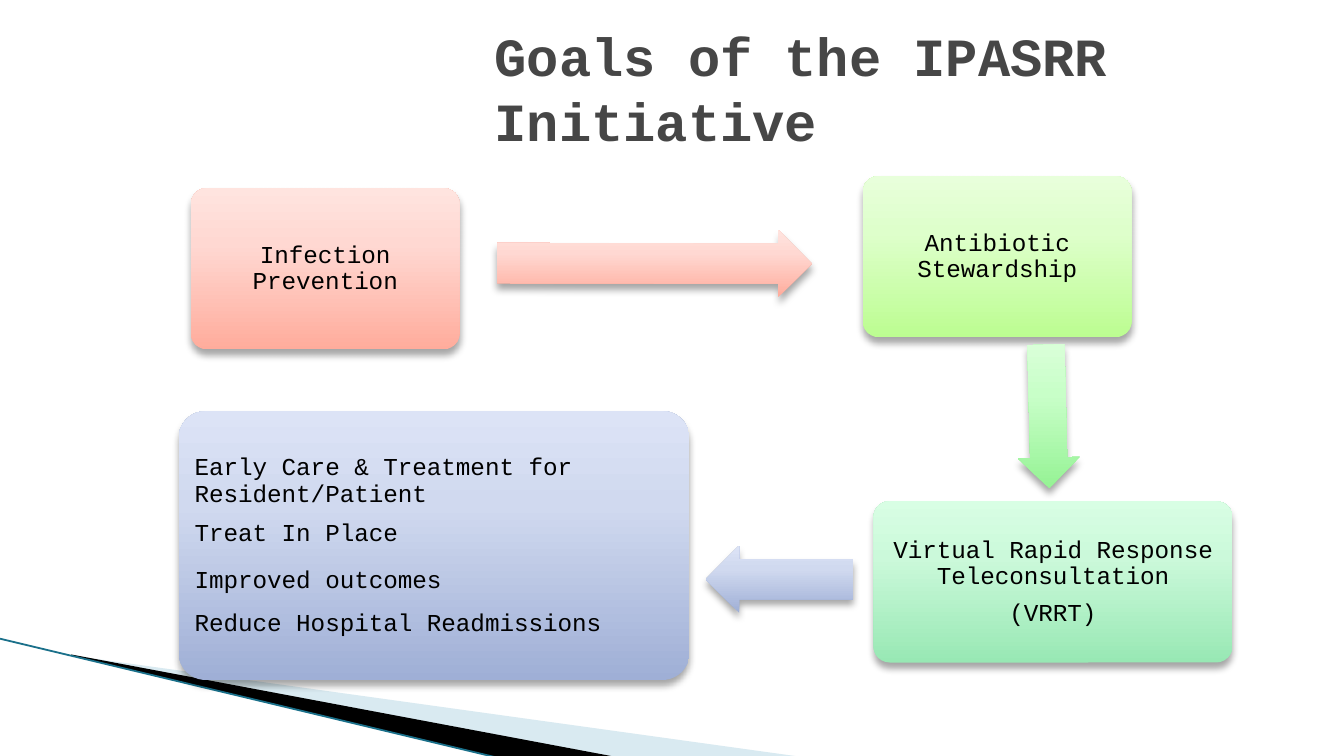
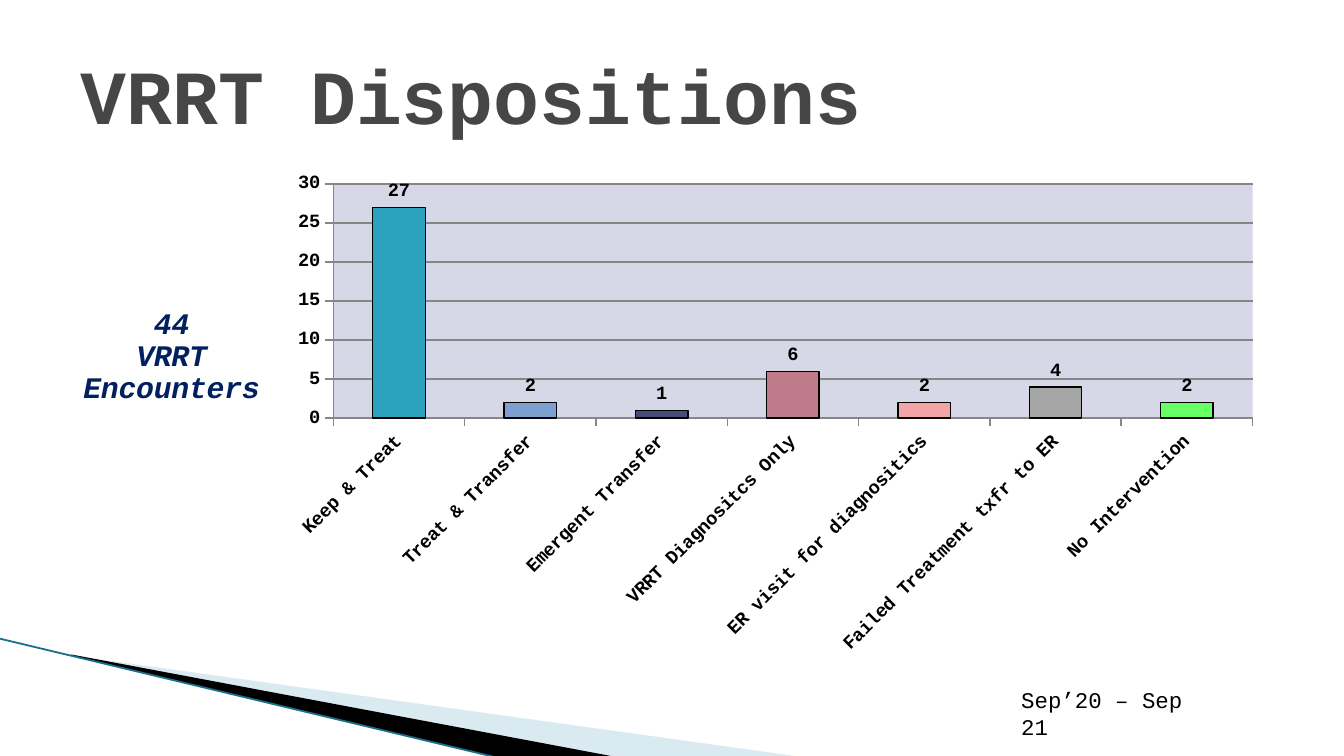
from pptx import Presentation
from pptx.chart.data import CategoryChartData
from pptx.dml.color import RGBColor
from pptx.enum.chart import XL_CHART_TYPE as ChartType, XL_LABEL_POSITION as LabelPosition, XL_TICK_MARK as Tick
from pptx.enum.shapes import MSO_CONNECTOR as Connector, MSO_SHAPE as Shape
from pptx.enum.text import MSO_ANCHOR as Anchor, MSO_AUTO_SIZE as AutoSize, PP_ALIGN as Align
from pptx.oxml import parse_xml
from pptx.oxml.ns import nsdecls
from pptx.util import Inches, Pt

BLACK = RGBColor(0x00, 0x00, 0x00)
TITLE_GREY = RGBColor(0x46, 0x46, 0x46)
PALE_TEAL = RGBColor(0xA0, 0xCB, 0xDC)
DEEP_TEAL = RGBColor(0x1A, 0x70, 0x8A)
NAVY = RGBColor(0x00, 0x20, 0x60)
GRID_GREY = RGBColor(0x86, 0x86, 0x86)
PLOT_LILAC = RGBColor(0xD7, 0xD8, 0xE7)
BAR_COLOURS = [
    RGBColor(0x2D, 0xA2, 0xBF), RGBColor(0x7D, 0xA0, 0xD0), RGBColor(0x47, 0x4B, 0x78),
    RGBColor(0xC0, 0x7B, 0x8A), RGBColor(0xF2, 0xA4, 0xA7), RGBColor(0xA6, 0xA6, 0xA6),
    RGBColor(0x66, 0xFF, 0x66),
]
CORAL = [RGBColor(0xFF, 0xAC, 0x9C), RGBColor(0xFF, 0xD8, 0xD2), RGBColor(0xFF, 0xE4, 0xDF)]
LIME = [RGBColor(0xBC, 0xFD, 0x91), RGBColor(0xDE, 0xFF, 0xCB), RGBColor(0xE8, 0xFF, 0xDB)]
GREEN = [RGBColor(0x95, 0xF2, 0x94), RGBColor(0xC8, 0xFF, 0xC8), RGBColor(0xD9, 0xFF, 0xD8)]
MINT = [RGBColor(0x98, 0xE8, 0xB4), RGBColor(0xCB, 0xF9, 0xDA), RGBColor(0xD8, 0xFE, 0xE4)]
BLUE = [RGBColor(0x9F, 0xAF, 0xD6), RGBColor(0xD0, 0xD9, 0xEF), RGBColor(0xDC, 0xE3, 0xF6)]
FONT = "Courier New"

deck = Presentation()
deck.slide_width, deck.slide_height = Inches(10), Inches(5.625)
CELL = deck.slide_width / 100


def write(frame, lines, size, colour=BLACK, **font_values):
    frame.text = "\n".join(lines)
    for para in frame.paragraphs:
        for name, value in {"name": FONT, "size": Pt(size), **font_values}.items():
            setattr(para.font, name, value)
        para.font.color.rgb = colour


def add_glossy(page, kind, cells, colours, adjustments):
    shape = page.shapes.add_shape(kind, *[round(CELL * cell) for cell in cells])
    for index, value in enumerate(adjustments):
        shape.adjustments[index] = value
    shape.line.fill.background()
    stops = "".join(
        f'<a:gs pos="{stop}"><a:srgbClr val="{colour}"/></a:gs>'
        for stop, colour in zip((0, 65000, 100000), colours))
    outline = shape.element.spPr.find("{*}ln")
    outline.addprevious(parse_xml(
        f'<a:gradFill {nsdecls("a")} rotWithShape="0"><a:gsLst>{stops}</a:gsLst>'
        '<a:lin ang="16200000" scaled="0"/></a:gradFill>'))
    outline.addnext(parse_xml(
        f'<a:effectLst {nsdecls("a")}><a:outerShdw blurRad="50800" dist="38100" dir="5400000" '
        'rotWithShape="0"><a:srgbClr val="000000"><a:alpha val="35000"/></a:srgbClr>'
        '</a:outerShdw></a:effectLst>'))
    return shape


layout = deck.slide_layouts[5]
goals_page, chart_page = [deck.slides.add_slide(layout) for _ in range(2)]

wedges = [
    (PALE_TEAL, [(55, 488), (595, 563), (456, 563)]),
    (BLACK, [(53, 487), (457, 563), (372, 564), (54, 488)]),
]
band = []
for colour, points in wedges:
    builder = goals_page.shapes.build_freeform(*points[0], scale=CELL / 10)
    builder.add_line_segments(points[1:], close=True)
    wedge = builder.convert_to_shape()
    wedge.shadow.inherit = False
    wedge.fill.solid()
    wedge.fill.fore_color.rgb = colour
    wedge.line.fill.background()
    band.append(wedge)
band[0].element.spPr.find("{*}solidFill")[0].append(
    parse_xml(f'<a:alpha {nsdecls("a")} val="40000"/>'))
edge = goals_page.shapes.add_connector(
    Connector.STRAIGHT, *[round(CELL * cell) for cell in (-0.1, 47.5, 37.1, 56.4)])
edge.line.color.rgb = DEEP_TEAL
edge.line.width = Pt(0.95)
edge.element.spPr.append(parse_xml(f'<a:effectLst {nsdecls("a")}/>'))
band.append(edge)
for index, part in enumerate(band):
    layout.shapes.element.insert(2 + index, part.element)

titles = [
    (goals_page, "Goals of the IPASRR Initiative", 28.8, (35.8, 2.3, 62.5, 8.4)),
    (chart_page, "VRRT Dispositions", 41, (5, 2.3, 90, 9.4)),
]
for page, text, size, cells in titles:
    title = page.shapes.title
    title.left, title.top, title.width, title.height = [round(CELL * cell) for cell in cells]
    frame = title.text_frame
    write(frame, [text], size, TITLE_GREY, bold=True)
    frame.auto_size = AutoSize.NONE
    frame.vertical_anchor = Anchor.MIDDLE
    frame.paragraphs[0].alignment = Align.LEFT

goals = [
    ((14.2, 14, 20, 12), CORAL, Align.CENTER, ["Infection Prevention"]),
    ((64.2, 13.1, 20, 12), LIME, Align.CENTER, ["Antibiotic Stewardship"]),
    ((65, 37.3, 26.7, 12), MINT, Align.CENTER,
     ["Virtual Rapid Response Teleconsultation", "(VRRT)"]),
    ((13.3, 30.6, 38, 20), BLUE, Align.LEFT,
     ["Early Care & Treatment for Resident/Patient", "Treat In Place",
      "Improved outcomes", "Reduce Hospital Readmissions"]),
]
for cells, colours, alignment, lines in goals:
    box = add_glossy(goals_page, Shape.ROUNDED_RECTANGLE, cells, colours, [0.1])
    frame = box.text_frame
    write(frame, lines, 13)
    frame.word_wrap = True
    frame.vertical_anchor = Anchor.MIDDLE
    for side in ("left", "top", "right", "bottom"):
        setattr(frame, f"margin_{side}", Inches(0.06))
    for index, para in enumerate(frame.paragraphs):
        inner = 0 < index < len(lines) - 1
        para.alignment = alignment
        para.line_spacing = 1.0 if inner else 0.9
        para.space_after = Pt(9.2 if inner else 5.5)

arrows = [
    ((37, 17.1, 23.4, 5), CORAL, 0.1),
    ((72.6, 28.7, 10.7, 4.6), GREEN, 88.6),
    ((52.5, 40.6, 11, 5), BLUE, 180),
]
for cells, colours, turn in arrows:
    add_glossy(goals_page, Shape.RIGHT_ARROW, cells, colours, [0.6, 0.5]).rotation = turn

data = CategoryChartData()
data.categories = [
    "Keep & Treat", "Treat & Transfer", "Emergent Transfer", "VRRT Diagnositcs Only",
    "ER visit for diagnositics", "Failed Treatment txfr to ER", "No Intervention",
]
data.add_series("Series 1", [27, 2, 1, 6, 2, 4, 2])
chart = chart_page.shapes.add_chart(
    ChartType.COLUMN_CLUSTERED, *[round(CELL * cell) for cell in (5, 12.2, 90, 37.1)], data).chart
chart.has_title = chart.has_legend = False
chart.font.name, chart.font.size = FONT, Pt(10)
chart.font.color.rgb = BLACK

plot = chart.plots[0]
plot.gap_width = 150
plot.vary_by_categories = False
series = plot.series[0]
series.format.fill.solid()
series.format.fill.fore_color.rgb = BAR_COLOURS[0]
for index, colour in enumerate(BAR_COLOURS):
    bar = series.points[index].format
    bar.fill.solid()
    bar.fill.fore_color.rgb = colour
    bar.line.color.rgb = BLACK
    bar.line.width = Pt(0.75)
plot.has_data_labels = True
labels = plot.data_labels
labels.show_value = True
labels.position = LabelPosition.OUTSIDE_END

for axis in (chart.category_axis, chart.value_axis):
    axis.major_tick_mark = Tick.OUTSIDE
    axis.minor_tick_mark = Tick.NONE
    axis.format.line.color.rgb = GRID_GREY
for holder in (labels, chart.category_axis.tick_labels, chart.value_axis.tick_labels):
    for name, value in {"name": FONT, "size": Pt(10), "bold": True}.items():
        setattr(holder.font, name, value)
    holder.font.color.rgb = BLACK
chart.element.xpath(".//c:catAx/c:txPr/a:bodyPr")[0].set("rot", "-2700000")

scale = chart.value_axis
scale.minimum_scale, scale.maximum_scale, scale.major_unit = 0, 30, 5
scale.has_major_gridlines = True
scale.major_gridlines.format.line.color.rgb = GRID_GREY
caption = scale.axis_title.text_frame
write(caption, ["44", "VRRT", "Encounters"], 16, NAVY, bold=True, italic=True)
turned = chart.element.xpath(".//c:valAx/c:title//a:bodyPr")[0]
turned.set("rot", "0")
turned.set("vert", "horz")

plot_area = chart.element.xpath(".//c:plotArea")[0]
axis_title = chart.element.xpath(".//c:valAx/c:title")[0]
placements = [
    (plot_area, 0, {"x": 0.22, "y": 0.04, "w": 0.76, "h": 0.47}),
    (axis_title, 1, {"x": 0.01, "y": 0.28}),
]
for part, index, shares in placements:
    for old in part.xpath("./c:layout"):
        part.remove(old)
    target = '<c:layoutTarget val="inner"/>' if "w" in shares else ""
    modes = '<c:xMode val="edge"/><c:yMode val="edge"/>'
    sizes = "".join(f'<c:{name} val="{share}"/>' for name, share in shares.items())
    part.insert(index, parse_xml(
        f'<c:layout {nsdecls("c")}><c:manualLayout>{target}{modes}{sizes}</c:manualLayout></c:layout>'))
plot_area.append(parse_xml(
    f'<c:spPr {nsdecls("c", "a")}><a:solidFill><a:srgbClr val="{PLOT_LILAC}"/></a:solidFill></c:spPr>'))

period = chart_page.shapes.add_textbox(*[round(CELL * cell) for cell in (75, 50.6, 15, 3)])
write(period.text_frame, ["Sep’20 – Sep 21"], 12)
period.text_frame.word_wrap = True
period.text_frame.auto_size = AutoSize.SHAPE_TO_FIT_TEXT

deck.save("out.pptx")
